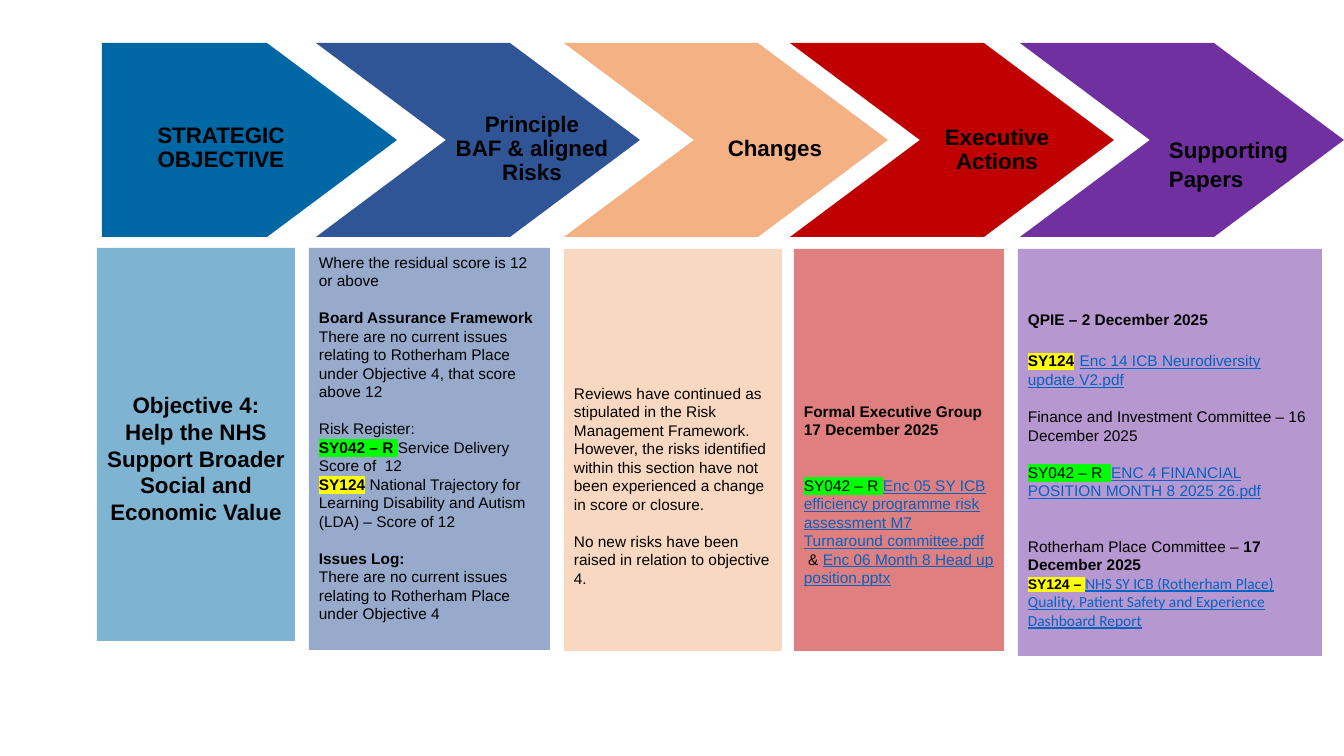
from dataclasses import dataclass

from lxml import etree
from pptx import Presentation, util as u
from pptx.dml.color import RGBColor
from pptx.enum import shapes, text
from pptx.oxml.ns import qn

PX = 914400 / 100.8


@dataclass(frozen=True)
class Theme:
    font: str = "Arial"
    ink: str = "000000"
    link: str = "0563C1"
    green: str = "00FF00"
    yellow: str = "FFFF00"
    heading: int = 16
    body: int = 11
    heading_pitch: float = 17
    blank_line: float = 13.2  # height of one skipped body line, in points


THEME = Theme()

# Each style lists only what differs from plain body text.
STYLES = {
    "plain": {},
    "bold": {"bold": True},
    "heading": {"bold": True, "size": THEME.heading},
    "link": {"colour": THEME.link, "underline": True},
    "report link": {"colour": THEME.link, "underline": True, "font": "Calibri"},
    "wide space": {"size": 14},
    "green": {"highlight": THEME.green},
    "bold green": {"highlight": THEME.green, "bold": True},
    "bold yellow": {"highlight": THEME.yellow, "bold": True},
    "small yellow": {"highlight": THEME.yellow, "bold": True, "size": 10},
}

ARROW_TOP, ARROW_HEIGHT, ARROW_POINT = 43, 194, 130

# kind, left, width, colour
ARROWS = [
    ("PENTAGON", 102, 295, "0067A5"),
    ("CHEVRON", 316, 324, "2F5597"),
    ("CHEVRON", 564, 324, "F4B183"),
    ("CHEVRON", 790, 324, "C00000"),
    ("CHEVRON", 1020, 324, "7030A0"),
]

# lines, centre x, centre y, alignment, line pitch in points
LABELS = [
    (["STRATEGIC", "OBJECTIVE"], 221, 148, "CENTER", THEME.heading_pitch),
    (["Principle", "BAF & aligned", "Risks"], 532, 149, "CENTER", THEME.heading_pitch),
    (["Changes"], 775, 149, "CENTER", THEME.heading_pitch),
    (["Executive", "Actions"], 997, 150, "CENTER", THEME.heading_pitch),
    (["Supporting", "Papers"], 1249, 163, "LEFT", 20.5),
]
LABEL_WIDTH, LABEL_HEIGHT = 160, 80

# (left, top, width, height), colour, top margin, alignment,
# paragraphs as (blank lines before, [(wording, style), ...])
PANELS = [
    ((97, 248, 198, 393), "7FB3D2", 143, "CENTER", [
        (0, [("Objective 4: Help the NHS Support Broader Social and Economic Value", "heading")]),
    ]),
    ((309, 248, 241, 402), "97AACB", 5, "LEFT", [
        (0, [("Where the residual score is 12 or above", "plain")]),
        (1, [("Board Assurance Framework", "bold")]),
        (0, [("There are no current issues relating to Rotherham Place under "
              "Objective 4, that score above 12", "plain")]),
        (1, [("Risk Register:", "plain")]),
        (0, [("SY042 – R ", "bold green"), ("Service Delivery Score of  12", "plain")]),
        (0, [("SY124", "bold yellow"),
             (" National Trajectory for Learning Disability and Autism (LDA) – Score of 12", "plain")]),
        (1, [("Issues Log:", "bold")]),
        (0, [("There are no current issues relating to Rotherham Place under Objective 4", "plain")]),
    ]),
    ((564, 249, 218, 402), "F9D8C1", 135, "LEFT", [
        (0, [("Reviews have continued as stipulated in the Risk Management Framework. "
              "However, the risks identified within this section have not been "
              "experienced a change in score or closure.", "plain")]),
        (1, [("No new risks have been raised in relation to objective 4.", "plain")]),
    ]),
    ((794, 249, 210, 402), "DF7F7F", 153, "LEFT", [
        (0, [("Formal Executive Group", "bold")]),
        (0, [("17 December 2025", "bold")]),
        (2, [("SY042 – R ", "green"),
             ("Enc 05 SY ICB efficiency programme risk assessment M7 "
              "Turnaround committee.pdf", "link")]),
        (0, [(" & ", "plain"), ("Enc 06 Month 8 Head up position.pptx", "link")]),
    ]),
    ((1018, 249, 304, 407), "B797CF", 61, "LEFT", [
        (0, [("QPIE – 2 December 2025", "bold")]),
        (1, [("SY124", "bold yellow"), (" ", "wide space"),
             ("Enc 14 ICB Neurodiversity update V2.pdf", "link")]),
        (1, [("Finance and Investment Committee – 16 December 2025", "plain")]),
        (1, [("SY042 – R  ", "green"), ("ENC 4 FINANCIAL POSITION MONTH 8 2025 26.pdf", "link")]),
        (2, [("Rotherham Place Committee – ", "plain"), ("17 December 2025", "bold")]),
        (0, [("SY124 – ", "small yellow"),
             ("NHS SY ICB (Rotherham Place) Quality, Patient Safety and Experience "
              "Dashboard Report", "report link")]),
    ]),
]


def px(*lengths):
    return [u.Emu(round(length * PX)) for length in lengths]


def format_span(span, size=THEME.body, colour=THEME.ink, bold=False,
                highlight=None, underline=False, font=THEME.font):
    span.font.size = u.Pt(size)
    span.font.bold = bold
    span.font.underline = underline
    span.font.color.rgb = RGBColor.from_string(colour)
    if highlight:
        marker = etree.SubElement(span.font._element, qn("a:highlight"))
        etree.SubElement(marker, qn("a:srgbClr"), val=highlight)
    span.font.name = font


def add_block(page, kind, frame, colour):
    block = page.shapes.add_shape(getattr(shapes.MSO_SHAPE, kind), *px(*frame))
    block.shadow.inherit = False
    block.fill.solid()
    block.fill.fore_color.rgb = RGBColor.from_string(colour)
    block.line.fill.background()
    return block


def write(frame, paragraphs, alignment, pitch=None):
    """Fill a text frame; pitch fixes the line height in points."""
    frame.word_wrap = True
    for index, (blank_lines, spans) in enumerate(paragraphs):
        para = frame.paragraphs[0] if index == 0 else frame.add_paragraph()
        para.alignment = getattr(text.PP_ALIGN, alignment)
        if blank_lines:
            para.space_before = u.Pt(blank_lines * THEME.blank_line)
        if pitch:
            para.line_spacing = u.Pt(pitch)
        for wording, style in spans:
            span = para.add_run()
            span.text = wording
            format_span(span, **STYLES[style])


def add_arrow(page, kind, left, width, colour):
    arrow = add_block(page, kind, (left, ARROW_TOP, width, ARROW_HEIGHT), colour)
    arrow.adjustments[0] = round(ARROW_POINT / ARROW_HEIGHT, 2)


def add_label(page, lines, centre_x, centre_y, alignment, pitch):
    box = page.shapes.add_textbox(*px(centre_x - LABEL_WIDTH / 2, centre_y - LABEL_HEIGHT / 2,
                                      LABEL_WIDTH, LABEL_HEIGHT))
    frame = box.text_frame
    frame.margin_left = frame.margin_right = frame.margin_top = frame.margin_bottom = 0
    frame.vertical_anchor = text.MSO_ANCHOR.MIDDLE
    write(frame, [(0, [(line, "heading")]) for line in lines], alignment, pitch)


def add_panel(page, place, colour, top_margin, alignment, paragraphs):
    frame = add_block(page, "RECTANGLE", place, colour).text_frame
    frame.vertical_anchor = text.MSO_ANCHOR.TOP
    frame.margin_top = px(top_margin)[0]
    write(frame, paragraphs, alignment)


def main():
    deck = Presentation()
    deck.slide_width, deck.slide_height = px(1344, 756)
    page = deck.slides.add_slide(deck.slide_layouts[6])
    for add, rows in ((add_arrow, ARROWS), (add_label, LABELS), (add_panel, PANELS)):
        for row in rows:
            add(page, *row)
    deck.save("out.pptx")


if __name__ == "__main__":
    main()
